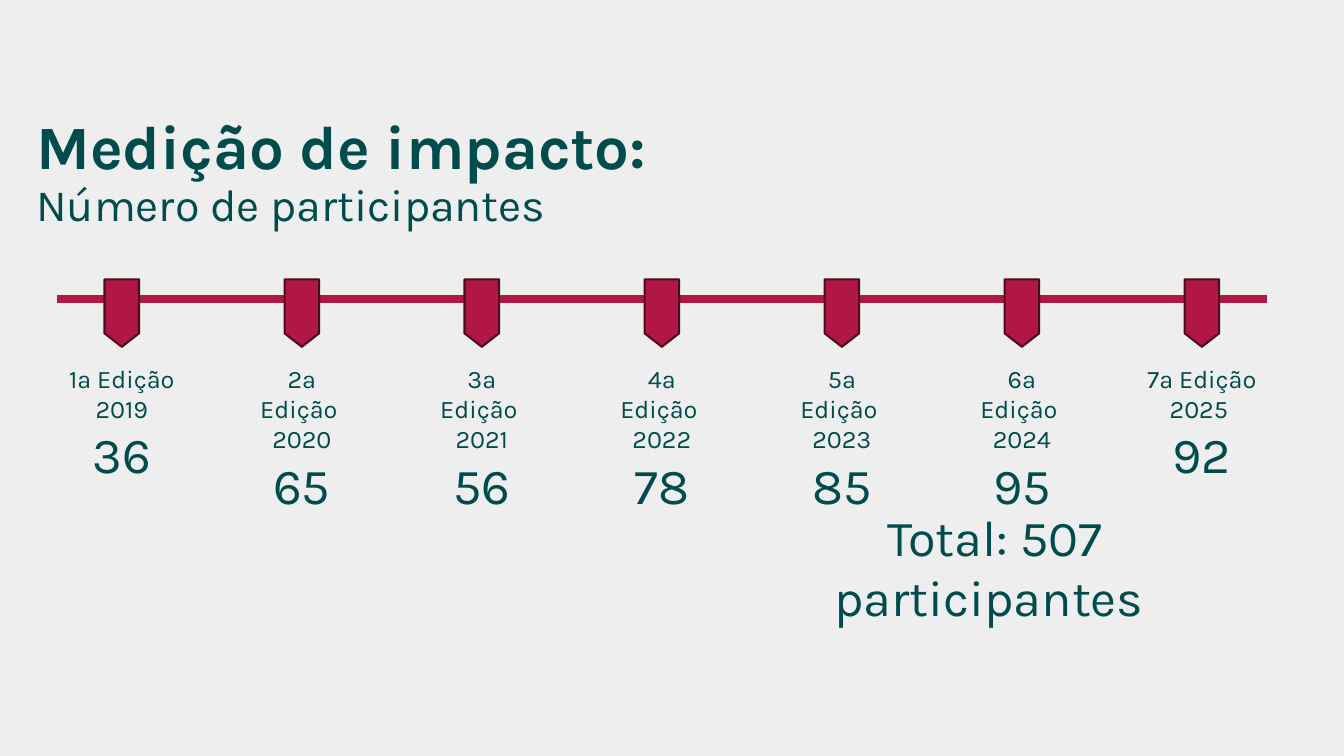
import pptx
import pptx.dml.color
import pptx.enum.shapes
import pptx.enum.text
import pptx.oxml.ns
import pptx.util
from lxml import etree

Cm = pptx.util.Cm
Pt = pptx.util.Pt
PP_ALIGN = pptx.enum.text.PP_ALIGN

COLORS = {"background": "EEEEEE", "text": "004C4D", "pin": "B01744", "pin_edge": "4D0A1E"}
EDITIONS = [
    ("1ª Edição ", "2019", "36"),
    ("2ª Edição ", "2020", "65"),
    ("3ª Edição ", "2021", "56"),
    ("4ª Edição ", "2022", "78"),
    ("5ª Edição ", "2023", "85"),
    ("6ª Edição ", "2024", "95"),
    ("7ª Edição ", "2025 ", "92"),
]
GROWING = {"word_wrap": False, "auto_size": pptx.enum.text.MSO_AUTO_SIZE.SHAPE_TO_FIT_TEXT}
TITLE_FRAME = {
    "word_wrap": True,
    "auto_size": pptx.enum.text.MSO_AUTO_SIZE.NONE,
    "vertical_anchor": pptx.enum.text.MSO_ANCHOR.MIDDLE,
}


def apply(target, values):
    """Set each attribute of the target from a dict."""
    for attribute, value in values.items():
        setattr(target, attribute, value)


def rgb(key):
    """Return the named colour."""
    return pptx.dml.color.RGBColor.from_string(COLORS[key])


def add_words(paragraph, words, size, bold=False):
    """Append a run in the slide's typeface."""
    run = paragraph.add_run()
    run.text = words
    apply(run.font, {"name": "Karla", "size": Pt(size), "bold": bold})
    run.font.color.rgb = rgb("text")


def add_heading(slide, left, top, width, height):
    """Fill the title placeholder with heading and subheading."""
    heading = slide.shapes.title
    apply(heading, {"left": left, "top": top, "width": width, "height": height})
    apply(heading.text_frame, TITLE_FRAME)
    paragraph = heading.text_frame.paragraphs[0]
    apply(paragraph, {"alignment": PP_ALIGN.LEFT, "line_spacing": 0.9})
    add_words(paragraph, "Medição de impacto:", 44, True)
    paragraph.add_line_break()
    add_words(paragraph, "Número de participantes", 32)


def add_centred_lines(slide, left, top, width, height, lines):
    """Place a text box of centred (words, size) lines."""
    frame = slide.shapes.add_textbox(left, top, width, height).text_frame
    apply(frame, GROWING)
    for index, (words, size) in enumerate(lines):
        paragraph = frame.add_paragraph() if index else frame.paragraphs[0]
        paragraph.alignment = PP_ALIGN.CENTER
        add_words(paragraph, words, size)


def add_axis(slide, left, top, width):
    """Draw the horizontal line of the timeline."""
    axis = slide.shapes.add_connector(
        pptx.enum.shapes.MSO_CONNECTOR.STRAIGHT, left, top, left + width, top
    )
    axis.line.color.rgb = rgb("pin")
    axis.line.width = Pt(6)
    etree.SubElement(axis._element.spPr, pptx.oxml.ns.qn("a:effectLst"))


def add_pin(slide, left, top, width, height):
    """Draw one edition marker."""
    pin = slide.shapes.add_shape(
        pptx.enum.shapes.MSO_SHAPE.FLOWCHART_OFFPAGE_CONNECTOR, left, top, width, height
    )
    pin.shadow.inherit = False
    pin.fill.solid()
    pin.fill.fore_color.rgb = rgb("pin")
    pin.line.color.rgb = rgb("pin_edge")
    pin.line.width = Pt(1.5)


def add_timeline(slide, left, top, width):
    """Place the axis with evenly spaced pins and edition labels."""
    label_width, pin_width = Cm(3.28), Cm(0.87)
    pitch = (width - label_width) / (len(EDITIONS) - 1)
    add_axis(slide, left, top + Cm(0.5), width)
    for index, (edition, year, participants) in enumerate(EDITIONS):
        label_left = left + round(index * pitch)
        pin_left = label_left + (label_width - pin_width) // 2
        add_pin(slide, pin_left, top, pin_width, Cm(1.7))
        lines = [(edition, 18), (year, 18), (participants, 36)]
        add_centred_lines(slide, label_left, top + Cm(1.98), label_width, Cm(3.33), lines)


def main():
    """Build and save the slide."""
    presentation = pptx.Presentation()
    apply(presentation, {"slide_width": Cm(33.87), "slide_height": Cm(19.05)})
    slide = presentation.slides.add_slide(presentation.slide_layouts[5])
    slide.background.fill.solid()
    slide.background.fill.fore_color.rgb = rgb("background")
    add_heading(slide, Cm(0.66), Cm(2.54), Cm(29.21), Cm(3.68))
    add_timeline(slide, Cm(1.43), Cm(7.04), Cm(30.5))
    total = [("Total: 507 participantes ", 36)]
    add_centred_lines(slide, Cm(18.21), Cm(12.62), Cm(13.72), Cm(1.8), total)
    presentation.save("out.pptx")


if __name__ == "__main__":
    main()
